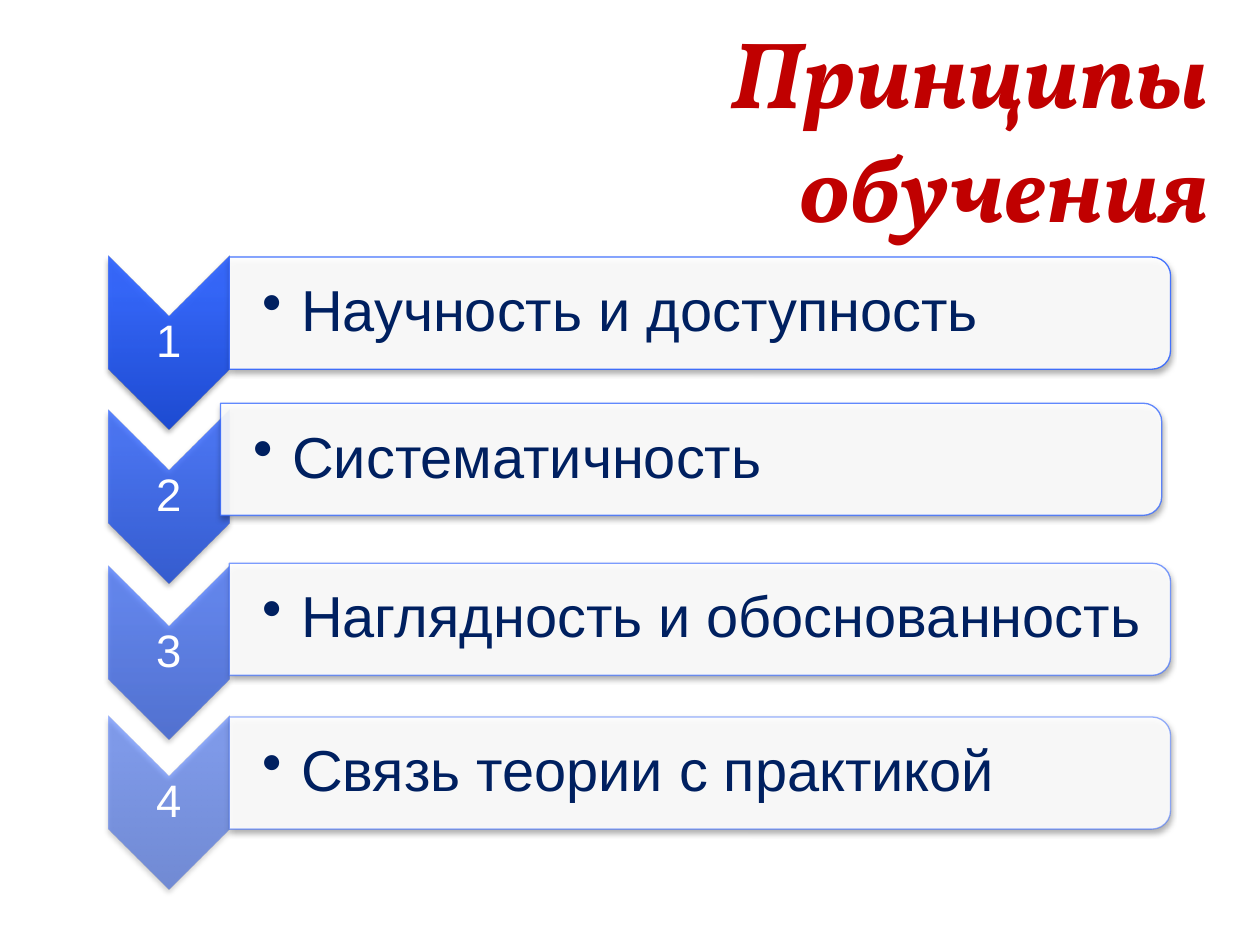
from lxml import etree
from pptx import Presentation
from pptx.dml.color import RGBColor
from pptx.enum.shapes import MSO_SHAPE
from pptx.enum.text import MSO_ANCHOR, MSO_AUTO_SIZE, PP_ALIGN
from pptx.oxml import parse_xml
from pptx.oxml.ns import nsdecls, qn
from pptx.util import Inches, Pt

CHEVRON = MSO_SHAPE.CHEVRON
CARD = MSO_SHAPE.ROUND_2_SAME_RECTANGLE
MIDDLE = MSO_ANCHOR.MIDDLE
NO_FIT = MSO_AUTO_SIZE.NONE
LEFT, CENTER, RIGHT = PP_ALIGN.LEFT, PP_ALIGN.CENTER, PP_ALIGN.RIGHT

# The slide is a grid of 100 columns by 75 rows.
COLS, ROWS = 100, 75
CELL = Inches(10) // COLS


def cells(*counts):
    return [round(n * CELL) for n in counts]


def color(code):
    return RGBColor.from_string(code)


def fade(part, share):
    """Set the opacity, in percent, of every colour inside an XML part."""
    for tint in part.iter(qn("a:srgbClr")):
        etree.SubElement(tint, qn("a:alpha")).set("val", str(share * 1000))


class Deck:
    face = "Arial"
    red, navy, white, blue = "C00000", "002060", "FFFFFF", "3366FF"
    stops = ((0, "0F41D5"), (80, "295FFF"), (100, "2B60FF"))

    def __init__(self):
        self.file = Presentation()
        self.file.slide_width, self.file.slide_height = cells(COLS, ROWS)
        self.slide = self.file.slides.add_slide(self.file.slide_layouts[5])

    def fill_text(self, frame, text, size, ink, align):
        frame.word_wrap = True
        frame.auto_size = NO_FIT
        frame.vertical_anchor = MIDDLE
        line = frame.paragraphs[0]
        line.text = text
        line.alignment = align
        line.font.size = Pt(size)
        line.font.name = self.face
        line.font.color.rgb = color(ink)
        return line

    def title(self, text, *box):
        head = self.slide.shapes.title
        head.left, head.top, head.width, head.height = cells(*box)
        font = self.fill_text(head.text_frame, text, 54, self.red, RIGHT).font
        font.name = "Vollkorn"
        font.bold = font.italic = True

    def turned(self, kind, x, y, w, h):
        """Add a shape turned by 90 degrees that covers the given box."""
        left, top = x + (w - h) / 2, y + (h - w) / 2
        shape = self.slide.shapes.add_shape(kind, *cells(left, top, h, w))
        shape.rotation = 90
        return shape

    def shade(self, shape):
        shape._element.spPr.append(parse_xml(
            f'<a:effectLst {nsdecls("a")}><a:outerShdw blurRad="40000" dist="23000" '
            'dir="5400000" rotWithShape="0"><a:srgbClr val="000000">'
            '<a:alpha val="35000"/></a:srgbClr></a:outerShdw></a:effectLst>'))

    def chevron(self, share, *box):
        shape = self.turned(CHEVRON, *box)
        marks = "".join(f'<a:gs pos="{at * 1000}"><a:srgbClr val="{code}"/></a:gs>'
                        for at, code in self.stops)
        blend = parse_xml(
            f'<a:gradFill {nsdecls("a")} rotWithShape="0"><a:gsLst>{marks}</a:gsLst>'
            '<a:lin ang="16200000" scaled="0"/></a:gradFill>')
        fade(blend, share)
        shape._element.spPr.append(blend)
        shape.line.fill.background()
        self.shade(shape)

    def card(self, share, *box):
        shape = self.turned(CARD, *box)
        shape.fill.solid()
        shape.fill.fore_color.rgb = color(self.white)
        fade(shape._element.spPr, 90)
        shape.line.color.rgb = color(self.blue)
        shape.line.width = Pt(0.75)
        fade(shape._element.spPr.find(qn("a:ln")), share)
        self.shade(shape)

    def label(self, text, size, ink, box, inset=0.2, align=LEFT, bullet=False):
        frame = self.slide.shapes.add_textbox(*cells(*box)).text_frame
        frame.margin_left, frame.margin_right = cells(inset, 0.2)
        frame.margin_top = frame.margin_bottom = cells(0.2)[0]
        if bullet:
            props = frame.paragraphs[0]._p.get_or_add_pPr()
            indent = cells(3.1)[0]
            props.set("marL", str(indent))
            props.set("indent", str(-indent))
            etree.SubElement(props, qn("a:buChar")).set("char", "•")
        self.fill_text(frame, text, size, ink, align).line_spacing = 0.9

    def step(self, number, text, share, mid, left, center):
        """Add a numbered chevron centred on row mid and its card on row center."""
        self.chevron(share, 8.6, mid - 6.9, 9.6, 13.8)
        self.label(str(number), 26, self.white, (8.6, mid - 2.05, 9.6, 4.1),
                   align=CENTER)
        self.card(share, left, center - 4.45, 74.7, 8.9)
        self.label(text, 33, self.navy, (left, center - 4.05, 74.3, 8.1),
                   inset=2.6, bullet=True)


def main():
    deck = Deck()
    deck.title("Принципы обучения", 41.4, 3.9, 55.5, 12.5)
    steps = (
        ("Научность и доступность", 90, 27.2, 18.2, 24.85),
        ("Систематичность", 77, 39.4, 17.5, 36.45),
        ("Наглядность и обоснованность", 63, 51.8, 18.2, 49.15),
        ("Связь теории с практикой", 50, 63.7, 18.2, 61.35),
    )
    for number, step in enumerate(steps, 1):
        deck.step(number, *step)
    deck.file.save("out.pptx")


if __name__ == "__main__":
    main()
